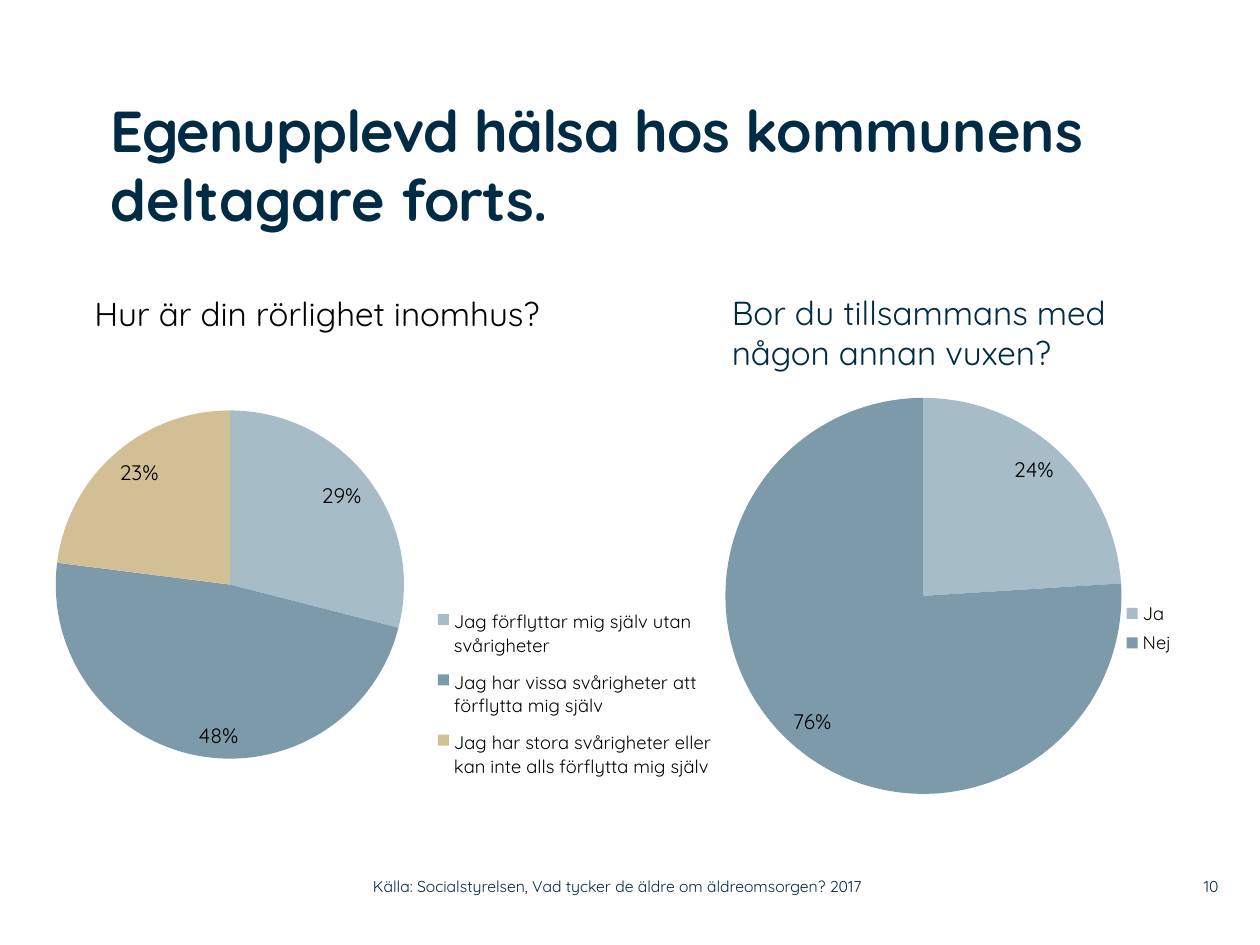
from lxml import etree
from pptx import Presentation
from pptx.chart.data import CategoryChartData
from pptx.dml.color import RGBColor
from pptx.enum.chart import XL_CHART_TYPE, XL_LABEL_POSITION, XL_LEGEND_POSITION
from pptx.enum.text import MSO_ANCHOR, PP_ALIGN
from pptx.oxml.ns import qn
from pptx.util import Inches, Pt

FONT = "Quicksand"
NAVY = RGBColor(0x00, 0x2B, 0x45)
BLACK = RGBColor(0x00, 0x00, 0x00)
LIGHT_BLUE = RGBColor(0xA6, 0xBC, 0xC6)
STEEL_BLUE = RGBColor(0x7D, 0x9A, 0xAA)
SAND = RGBColor(0xD3, 0xBF, 0x96)
SLICE_COLORS = [LIGHT_BLUE, STEEL_BLUE, SAND]

deck = Presentation()
deck.slide_width, deck.slide_height = Inches(10), Inches(7.5)
page = deck.slides.add_slide(deck.slide_layouts[6])


def add_text(area, runs, size, color=NAVY, bold=False, inset=(0, 0),
             anchor=MSO_ANCHOR.TOP, align=PP_ALIGN.LEFT):
    """Add a one-paragraph box; runs are (text, letter spacing in points)."""
    box = page.shapes.add_textbox(*map(Inches, area))
    frame = box.text_frame
    frame.word_wrap = True
    frame.vertical_anchor = anchor
    frame.margin_left = frame.margin_right = Inches(inset[0])
    frame.margin_top = frame.margin_bottom = Inches(inset[1])
    para = frame.paragraphs[0]
    para.alignment = align
    for text, spacing in runs:
        span = para.add_run()
        span.text = text
        span.font.name = FONT
        span.font.size = Pt(size)
        span.font.bold = bold
        span.font.color.rgb = color
        if spacing:
            span.font._element.set("spc", str(int(spacing * 100)))


def place(parent, before, fractions, inner=False):
    """Fix the layout of a plot area or legend as fractions of the chart."""
    for old in parent.findall(qn("c:layout")):
        parent.remove(old)
    layout = etree.Element(qn("c:layout"))
    manual = etree.SubElement(layout, qn("c:manualLayout"))
    settings = [("layoutTarget", "inner")] if inner else []
    settings += [("xMode", "edge"), ("yMode", "edge")]
    settings += zip("xywh", fractions)
    for name, value in settings:
        etree.SubElement(manual, qn("c:" + name)).set("val", str(value))
    parent.find(qn(before)).addprevious(layout)


# Title
add_text((0.88, 0.75, 8.02, 1.42),
         [("Egenupplevd hälsa hos ", -0.5), ("kommunens deltagare ", 0), ("forts.", -0.5)],
         33, bold=True)

# Page number and source
add_text((9.2, 6.89, 0.47, 0.29), [("10", 0)], 9,
         anchor=MSO_ANCHOR.MIDDLE, align=PP_ALIGN.RIGHT)
add_text((2.96, 6.89, 4.43, 0.29),
         [("Källa: Socialstyrelsen, Vad tycker de äldre om äldreomsorgen? 2017", 0)], 9,
         anchor=MSO_ANCHOR.MIDDLE)

# Chart headings
add_text((0.65, 2.28, 4.07, 0.42), [("Hur är din rörlighet inomhus?", 0)], 19,
         color=BLACK, inset=(0.1, 0.05))
add_text((5.71, 2.27, 3.71, 0.74), [("Bor du tillsammans med någon annan vuxen?", 0)], 19,
         inset=(0.1, 0.05))

# Pie charts: position, answers, plot layout, legend layout
pies = [
    ((4.89, 3.02), {"Ja": 24, "Nej": 76},
     (0.16, 0.04, 0.58, 0.92), (0.73, 0.5, 0.1, 0.15)),
    ((0.28, 2.93), {"Jag förflyttar mig själv utan svårigheter": 29,
                    "Jag har vissa svårigheter att förflytta mig själv": 48,
                    "Jag har stora svårigheter eller kan inte alls förflytta mig själv": 23},
     (0.03, 0.09, 0.51, 0.82), (0.58, 0.53, 0.42, 0.45)),
]
for (left, top), answers, plot_layout, legend_layout in pies:
    data = CategoryChartData()
    data.categories = list(answers)
    data.add_series("Series 1", list(answers.values()))
    chart = page.shapes.add_chart(XL_CHART_TYPE.PIE, Inches(left), Inches(top),
                                  Inches(5.42), Inches(3.42), data).chart
    chart.has_title = False
    chart.font.name = FONT
    chart.font.size = Pt(10)
    chart.font.color.rgb = BLACK

    plot = chart.plots[0]
    plot.vary_by_categories = True
    for index, color in enumerate(SLICE_COLORS[:len(answers)]):
        fill = plot.series[0].points[index].format.fill
        fill.solid()
        fill.fore_color.rgb = color

    plot.has_data_labels = True
    labels = plot.data_labels
    labels.show_percentage = True
    labels.show_value = False
    labels.number_format = "0%"
    labels.number_format_is_linked = False
    labels.position = XL_LABEL_POSITION.INSIDE_END
    labels.font.name = FONT
    labels.font.size = Pt(12)
    labels.font.color.rgb = BLACK

    chart.has_legend = True
    legend = chart.legend
    legend.position = XL_LEGEND_POSITION.RIGHT
    legend.include_in_layout = False
    legend.font.name = FONT
    legend.font.size = Pt(10.5)
    legend.font.color.rgb = BLACK

    plot_area = chart._chartSpace.find(".//" + qn("c:plotArea"))
    place(plot_area, "c:pieChart", plot_layout, inner=True)
    place(legend._element, "c:overlay", legend_layout)

deck.save("out.pptx")
